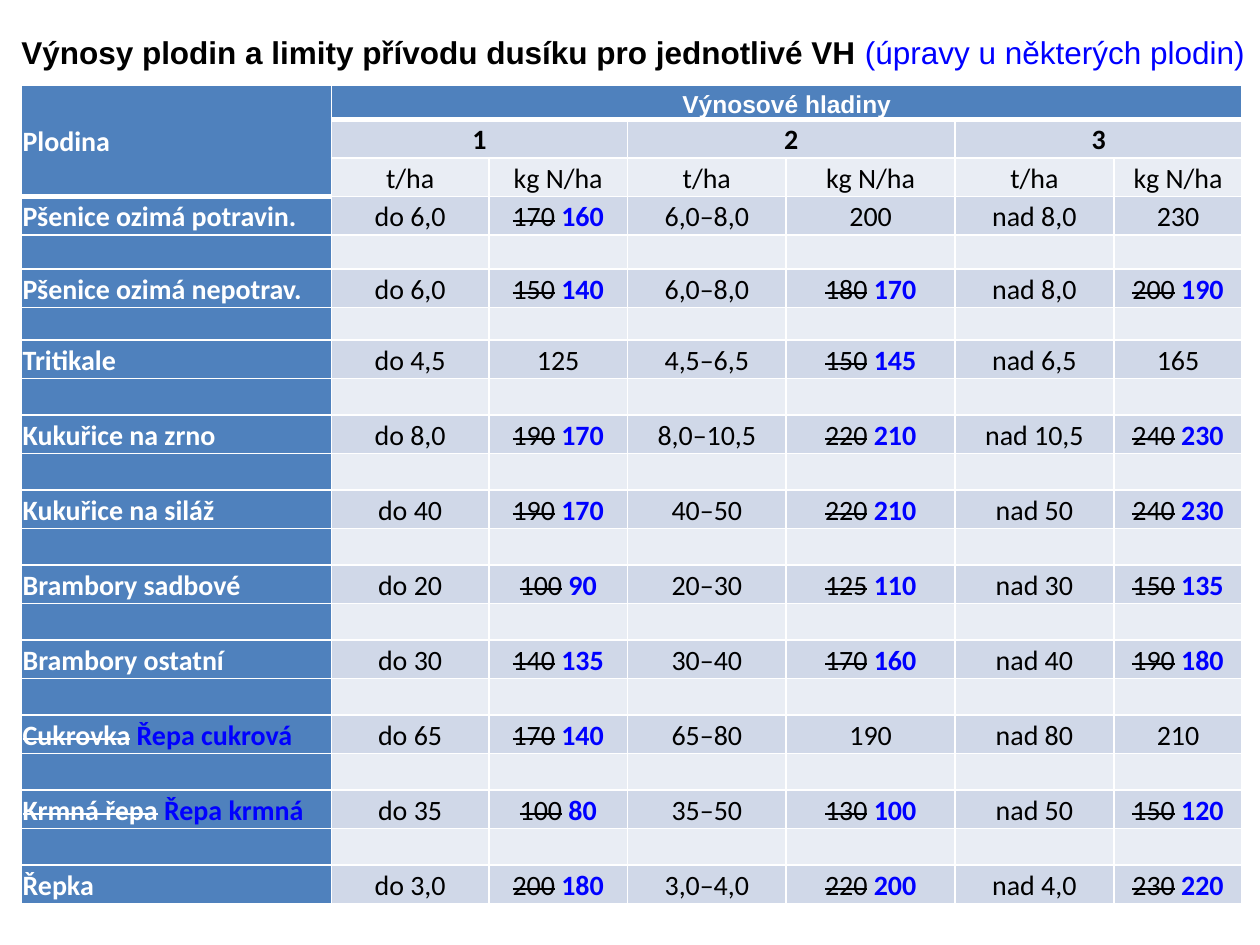
from dataclasses import dataclass

from lxml import etree
from pptx import Presentation
from pptx import util as u
from pptx.dml.color import RGBColor
from pptx.enum import text
from pptx.oxml import ns


@dataclass(frozen=True)
class Theme:
    blue: str = "4F81BD"
    band: str = "D0D8E8"
    pale: str = "E9EDF4"
    white: str = "FFFFFF"
    black: str = "000000"
    new: str = "0000FF"
    head: str = "Arial"
    body: str = "Calibri"
    title: int = 18
    top: int = 14
    cell: int = 16
    gap: int = 8


T = Theme()

COLS = [2.46, 1.25, 1.1, 1.26, 1.34, 1.26, 1.02]
ROW = 0.29
LOW = {0: 0.26, 4: 0.27, 6: 0.26}  # rows lower than the rest
HEADS = 3

# Crop, then t/ha and kg N/ha per yield level; "old>new" marks a revised value
CROPS = [
    ("Pšenice ozimá potravin.", "do 6,0", "170>160", "6,0–8,0", "200", "nad 8,0", "230"),
    ("Pšenice ozimá nepotrav.", "do 6,0", "150>140", "6,0–8,0", "180>170", "nad 8,0", "200>190"),
    ("Tritikale", "do 4,5", "125", "4,5–6,5", "150>145", "nad 6,5", "165"),
    ("Kukuřice na zrno", "do 8,0", "190>170", "8,0–10,5", "220>210", "nad 10,5", "240>230"),
    ("Kukuřice na siláž", "do 40", "190>170", "40–50", "220>210", "nad 50", "240>230"),
    ("Brambory sadbové", "do 20", "100>90", "20–30", "125>110", "nad 30", "150>135"),
    ("Brambory ostatní", "do 30", "140>135", "30–40", "170>160", "nad 40", "190>180"),
    ("Cukrovka>Řepa cukrová", "do 65", "170>140", "65–80", "190", "nad 80", "210"),
    ("Krmná řepa>Řepa krmná", "do 35", "100>80", "35–50", "130>100", "nad 50", "150>120"),
    ("Řepka", "do 3,0", "200>180", "3,0–4,0", "220>200", "nad 4,0", "230>220"),
]


def add_run(para, words, color, size=T.cell, name=T.body, bold=False, strike=False):
    run = para.add_run()
    run.text = words
    font = run.font
    font.size, font.name, font.bold = u.Pt(size), name, bold
    font.color.rgb = RGBColor.from_string(color)
    if strike:
        run._r.get_or_add_rPr().set("strike", "sngStrike")


def add_title(slide):
    shape = slide.shapes.title
    shape.left, shape.top = u.Inches(0), u.Inches(0.21)
    shape.width, shape.height = u.Inches(10), u.Inches(0.4)
    frame = shape.text_frame
    frame.word_wrap = True
    frame.auto_size = text.MSO_AUTO_SIZE.SHAPE_TO_FIT_TEXT
    frame.vertical_anchor = text.MSO_ANCHOR.MIDDLE
    para = frame.paragraphs[0]
    para.alignment = text.PP_ALIGN.LEFT
    for words, color, bold in [
        ("\u00a0", T.black, False),
        ("Výnosy plodin a\u00a0limity přívodu dusíku pro jednotlivé VH ", T.black, True),
        ("(úpravy u některých plodin)", T.new, False),
    ]:
        add_run(para, words, color, T.title, T.head, bold)


def set_edges(cell, top=1, bottom=1):
    """White borders; line elements go before the fill."""
    props = cell._tc.get_or_add_tcPr()
    widths = {"L": 1, "R": 1, "T": top, "B": bottom}
    for place, (side, width) in enumerate(widths.items()):
        line = etree.Element(ns.qn(f"a:ln{side}"), w=str(u.Pt(width)))
        fill = etree.SubElement(line, ns.qn("a:solidFill"))
        etree.SubElement(fill, ns.qn("a:srgbClr"), val=T.white)
        props.insert(place, line)


def style_cell(cell, row, col):
    """Fill, margins and borders that follow from the cell's place."""
    head = col == 0 or row == 0
    shade = T.blue if head else T.band if row % 2 else T.pale
    cell.fill.solid()
    cell.fill.fore_color.rgb = RGBColor.from_string(shade)
    cell.margin_left = cell.margin_right = u.Inches(0.01)
    cell.margin_top = cell.margin_bottom = u.Inches(0.01)
    rule = HEADS if col == 0 else 1  # the heavy line lies above this row
    heavy = row == rule - 1 or (row, col) == (0, 0)
    set_edges(cell, 3 if row == rule else 1, 3 if heavy else 1)


def write_cell(cell, words, color=T.black, bold=False, left=False,
               anchor=text.MSO_ANCHOR.MIDDLE, size=T.cell, name=T.body):
    cell.vertical_anchor = anchor
    para = cell.text_frame.paragraphs[0]
    para.line_spacing = 1.07
    para.alignment = text.PP_ALIGN.LEFT if left else text.PP_ALIGN.CENTER
    old, mark, new = words.partition(">")
    add_run(para, old, color, size, name, bold, strike=bool(mark))
    if mark:
        add_run(para, " ", color, size, name, bold)
        add_run(para, new, T.new, size, name, True)


def shrink_cell(cell):
    """Keep an empty cell from stretching its row."""
    para = cell.text_frame.paragraphs[0]._p
    etree.SubElement(para, ns.qn("a:endParaRPr"), sz=str(T.gap * 100))


def write_heads(table):
    low, mid = text.MSO_ANCHOR.BOTTOM, text.MSO_ANCHOR.MIDDLE
    table.cell(0, 0).merge(table.cell(HEADS - 1, 0))
    write_cell(table.cell(0, 0), "Plodina", T.white, True, left=True)
    table.cell(0, 1).merge(table.cell(0, len(COLS) - 1))
    write_cell(table.cell(0, 1), "Výnosové hladiny", T.white, True,
               anchor=low, size=T.top, name=T.head)
    for level in (1, 2, 3):
        col = 2 * level - 1
        table.cell(1, col).merge(table.cell(1, col + 1))
        write_cell(table.cell(1, col), str(level), bold=True,
                   anchor=mid if level == 1 else low)
        for step, unit in enumerate(("t/ha", "kg N/ha")):
            write_cell(table.cell(2, col + step), unit, anchor=low)


def write_crops(table):
    # Every second row stays empty as a spacer
    for index, crop in enumerate(CROPS):
        row = HEADS + 2 * index
        for col, words in enumerate(crop):
            first = col == 0
            last = first and index == len(CROPS) - 1
            write_cell(table.cell(row, col), words,
                       T.white if first else T.black, first, first,
                       text.MSO_ANCHOR.BOTTOM if last else text.MSO_ANCHOR.MIDDLE)


def add_grid(slide):
    count = HEADS + 2 * len(CROPS) - 1
    highs = [LOW.get(row, ROW) for row in range(count)]
    frame = slide.shapes.add_table(
        count, len(COLS), u.Inches(0.17), u.Inches(0.68),
        u.Inches(sum(COLS)), u.Inches(sum(highs)))
    table = frame.table
    table.horz_banding = table.first_row = False
    for col, width in zip(table.columns, COLS):
        col.width = u.Inches(width)
    for row, high in zip(table.rows, highs):
        row.height = u.Inches(high)
    write_heads(table)
    write_crops(table)
    for row in range(count):
        for col in range(len(COLS)):
            cell = table.cell(row, col)
            style_cell(cell, row, col)
            if not cell.text_frame.text:
                shrink_cell(cell)


def main():
    deck = Presentation()
    deck.slide_width, deck.slide_height = u.Inches(10), u.Inches(7.5)
    slide = deck.slides.add_slide(deck.slide_layouts[5])
    add_title(slide)
    add_grid(slide)
    deck.save("out.pptx")


if __name__ == "__main__":
    main()
